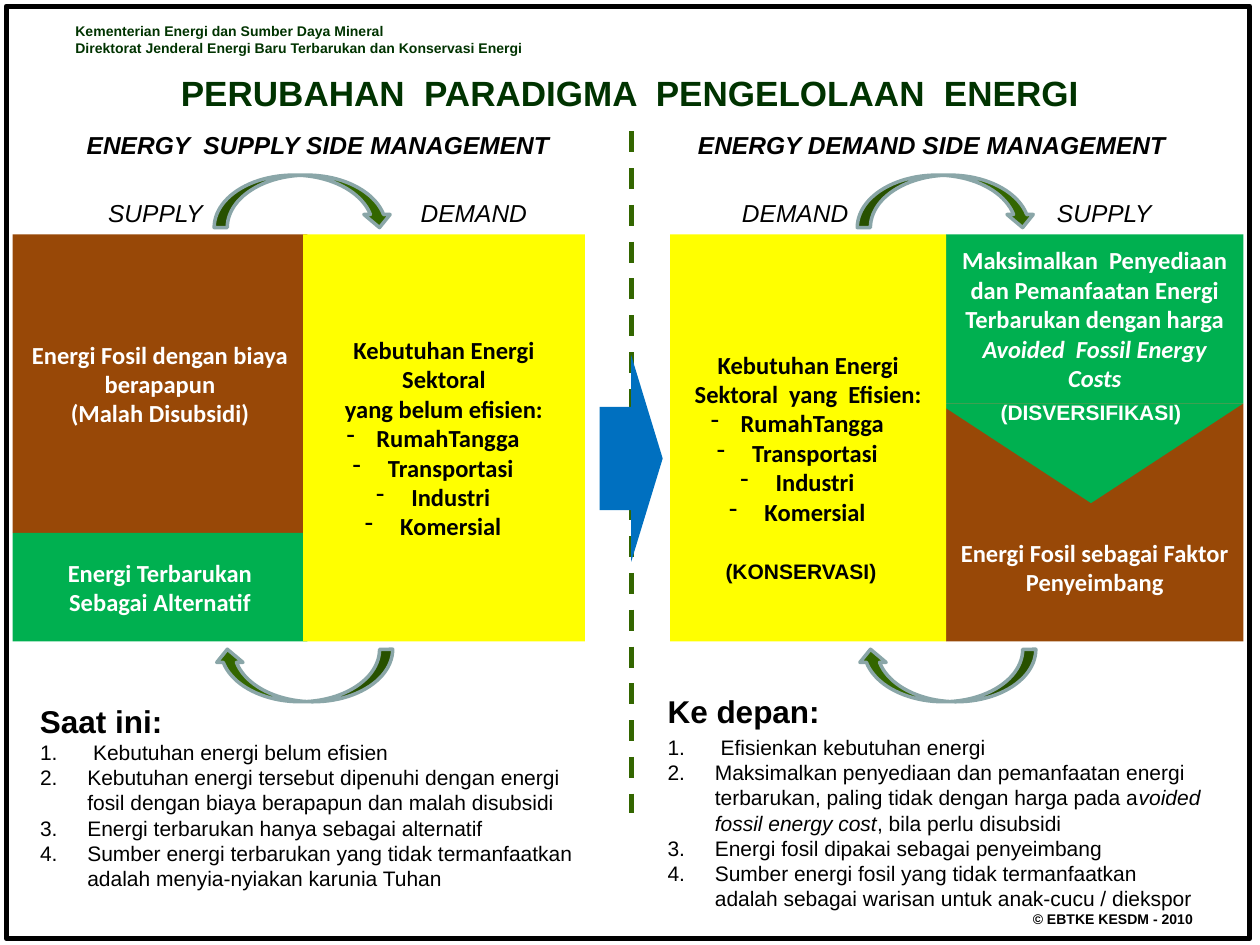
from lxml import etree
from pptx import Presentation
from pptx.dml.color import RGBColor
from pptx.enum.dml import MSO_LINE
from pptx.enum.shapes import MSO_CONNECTOR, MSO_SHAPE as SHAPE
from pptx.enum.text import MSO_ANCHOR as ANCHOR, MSO_AUTO_SIZE, PP_ALIGN as ALIGN
from pptx.oxml.ns import qn
from pptx.util import Pt

COLORS = {
    "black": "000000", "white": "FFFFFF", "title": "003300", "green": "336600",
    "arrow_edge": "8AA6A8", "blue": "0070C0", "fossil": "984807",
    "renewable": "00B050", "demand": "FFFF00",
}
SECTORS = ["RumahTangga", " Transportasi", " Industri", " Komersial"]
BLOCK_TOP, BLOCK_HEIGHT = 134, 232.5


def color(name):
    return RGBColor.from_string(COLORS[name])


def add_bullet(paragraph, kind):
    """Give a paragraph a number or a dash."""
    properties = paragraph._p.get_or_add_pPr()
    if kind == "number":
        properties.set("marL", str(Pt(27)))
        properties.set("indent", str(Pt(-27)))
        etree.SubElement(properties, qn("a:buAutoNum"), type="arabicPeriod")
    else:
        etree.SubElement(properties, qn("a:buFontTx"))
        etree.SubElement(properties, qn("a:buChar"), char="-")


def write_text(shape, lines, size=14, font="Arial", ink="black", bold=False,
               italic=False, align=ALIGN.LEFT, anchor=ANCHOR.TOP, wrap=True,
               bullet=None, bullet_from=0, top_inset=3.6):
    """Write lines; a line is a string or a list of (text, italic) runs."""
    frame = shape.text_frame
    frame.word_wrap = wrap
    frame.auto_size = MSO_AUTO_SIZE.NONE
    frame.vertical_anchor = anchor
    frame.margin_left = frame.margin_right = Pt(7.2)
    frame.margin_top, frame.margin_bottom = Pt(top_inset), Pt(3.6)
    for index, line in enumerate(lines):
        paragraph = frame.paragraphs[0] if index == 0 else frame.add_paragraph()
        paragraph.alignment = align
        paragraph.space_before = Pt(0)
        if bullet and index >= bullet_from:
            add_bullet(paragraph, bullet)
        for text, slanted in [(line, italic)] if isinstance(line, str) else line:
            run = paragraph.add_run()
            run.text = text
            run.font.name, run.font.size = font, Pt(size)
            run.font.bold, run.font.italic = bold, slanted
            run.font.color.rgb = color(ink)


def add_text(slide, box, lines, **style):
    write_text(slide.shapes.add_textbox(*map(Pt, box)), lines, **style)


def add_shape(slide, kind, box, fill=None, line=None, line_width=2, rotation=0):
    shape = slide.shapes.add_shape(kind, *map(Pt, box))
    shape.shadow.inherit = False
    shape.rotation = rotation
    if fill:
        shape.fill.solid()
        shape.fill.fore_color.rgb = color(fill)
    else:
        shape.fill.background()
    if line:
        shape.line.color.rgb = color(line)
        shape.line.width = Pt(line_width)
    else:
        shape.line.fill.background()
    return shape


def add_block(slide, box, fill, lines, ink="white", **style):
    block = add_shape(slide, SHAPE.RECTANGLE, box, fill)
    write_text(block, lines, font="Calibri", ink=ink, bold=True,
               align=ALIGN.CENTER, anchor=ANCHOR.MIDDLE, **style)


def add_frame(slide, box):
    """Page border, ministry name, title and copyright line."""
    left, top, width, height = box
    add_shape(slide, SHAPE.RECTANGLE, box, line="black", line_width=3)
    add_text(slide, (left + 32.4, top + 5.8, 504, 27),
             ["Kementerian Energi dan Sumber Daya Mineral",
              "Direktorat Jenderal Energi Baru Terbarukan dan Konservasi Energi"],
             size=8, ink="title", bold=True)
    add_text(slide, (left + width - 138.2, top + height - 19.4, 120, 17),
             ["© EBTKE KESDM - 2010"], size=8, bold=True, align=ALIGN.CENTER)
    title = slide.shapes.title
    title.left, title.top, title.width, title.height = map(Pt, (0, 37.4, 720, 31.5))
    write_text(title, ["PERUBAHAN  PARADIGMA  PENGELOLAAN  ENERGI"], size=20,
               ink="title", bold=True, align=ALIGN.CENTER)


def add_divider(slide, box):
    """Dashed line down the middle with the transition arrow on it."""
    left, top, width, height = box
    middle = Pt(left + width / 2)
    line = slide.shapes.add_connector(MSO_CONNECTOR.STRAIGHT, middle, Pt(top),
                                      middle, Pt(top + height))
    line.line.color.rgb = color("green")
    line.line.width = Pt(3)
    line.line.dash_style = MSO_LINE.DASH
    etree.SubElement(line._element.spPr, qn("a:effectLst"))
    add_shape(slide, SHAPE.RIGHT_ARROW, (left, top + 128, width, 118), "blue")


def add_side(slide, box, heading, heading_center, labels, summary_title,
             summary_box, items, items_top):
    """Heading, side labels, cycle arrows and summary of one half."""
    left, top, width, _ = box
    add_text(slide, (left + heading_center - width / 2, top, width, 24.5),
             [heading], bold=True, italic=True, align=ALIGN.CENTER)
    for text, offset in labels:
        add_text(slide, (left + offset, top + 39, 76, 24.5), [text],
                 italic=True, wrap=False)
    for arrow_top, rotation in ((top + 29.6, 0), (top + 300.5, 180)):
        add_shape(slide, SHAPE.CURVED_DOWN_ARROW, (left + 122.4, arrow_top, 102, 30),
                  "green", "arrow_edge", rotation=rotation)
    summary_left, summary_top = summary_box
    add_text(slide, (summary_left, summary_top, 158, 29), [summary_title],
             size=18, bold=True)
    add_text(slide, (summary_left, items_top, 320.5, 109), items, size=12,
             bullet="number")


def add_present_blocks(slide, box):
    """Supply on the left, demand on the right."""
    left, top, width, height = box
    fossil_height = 170.5
    add_block(slide, (left, top, 168.5, fossil_height), "fossil",
              ["Energi Fosil dengan biaya berapapun", "(Malah Disubsidi)"])
    add_block(slide, (left, top + fossil_height, 168.5, height - fossil_height),
              "renewable", ["Energi Terbarukan", "Sebagai Alternatif"])
    add_block(slide, (left + 166, top, width - 166, height), "demand",
              ["Kebutuhan Energi Sektoral", "yang belum efisien:", *SECTORS],
              ink="black", bullet="dash", bullet_from=2)


def add_future_blocks(slide, box):
    """Demand on the left, supply on the right."""
    left, top, width, height = box
    demand_width, renewable_height = 157.7, 96.5
    supply_left, supply_width = left + demand_width, width - demand_width
    fossil_top = top + renewable_height
    add_block(slide, (supply_left, top, supply_width, renewable_height), "renewable",
              [[("Maksimalkan  Penyediaan dan Pemanfaatan Energi Terbarukan dengan harga ",
                 False), ("Avoided  Fossil Energy Costs", True)]])
    add_block(slide, (supply_left, fossil_top, supply_width, height - renewable_height),
              "fossil", ["Energi Fosil sebagai Faktor Penyeimbang"], top_inset=55)
    add_shape(slide, SHAPE.ISOSCELES_TRIANGLE,
              (supply_left - 4.3, fossil_top, supply_width + 4.3, 57), "renewable",
              rotation=180)
    add_block(slide, (left, top, demand_width, height), "demand",
              ["Kebutuhan Energi Sektoral  yang  Efisien:", *SECTORS],
              ink="black", bullet="dash", bullet_from=1)
    add_text(slide, (left + 24.5, top + 181.5, 112, 22), ["(KONSERVASI)"],
             size=12, bold=True)
    add_text(slide, (supply_left + 23, top + 90.7, 119.5, 22), ["(DISVERSIFIKASI)"],
             size=12, ink="white", bold=True, align=ALIGN.CENTER)


def main():
    presentation = Presentation()
    presentation.slide_width, presentation.slide_height = Pt(720), Pt(540)
    slide = presentation.slides.add_slide(presentation.slide_layouts[5])

    add_frame(slide, (3.6, 3.6, 710.6, 532.8))
    add_divider(slide, (342.7, 75, 36, 389.5))

    # Present situation
    add_side(slide, (0, 70.5, 296, 465), "ENERGY  SUPPLY SIDE MANAGEMENT", 181.8,
             [("SUPPLY", 54.7), ("DEMAND", 233.3)], "Saat ini:", (15.8, 397.5),
             [" Kebutuhan energi belum efisien",
              "Kebutuhan energi tersebut dipenuhi dengan energi fosil dengan biaya "
              "berapapun dan malah disubsidi",
              "Energi terbarukan hanya sebagai alternatif",
              "Sumber energi terbarukan yang tidak termanfaatkan adalah "
              "menyia-nyiakan karunia Tuhan"], 419)
    add_present_blocks(slide, (7.2, BLOCK_TOP, 327, BLOCK_HEIGHT))

    # Future situation
    add_side(slide, (367.5, 70.5, 296, 465), "ENERGY DEMAND SIDE MANAGEMENT", 165,
             [("DEMAND", 49.4), ("SUPPLY", 229.4)], "Ke depan:", (374.4, 391.7),
             [" Efisienkan kebutuhan energi",
              [("Maksimalkan penyediaan dan pemanfaatan energi terbarukan, paling "
                "tidak dengan harga pada a", False),
               ("voided fossil energy cost", True), (", bila perlu disubsidi", False)],
              "Energi fosil dipakai sebagai penyeimbang",
              "Sumber energi fosil yang tidak termanfaatkan adalah sebagai warisan "
              "untuk anak-cucu / diekspor"], 416.2)
    add_future_blocks(slide, (383, BLOCK_TOP, 327.5, BLOCK_HEIGHT))

    presentation.save("out.pptx")


if __name__ == "__main__":
    main()
